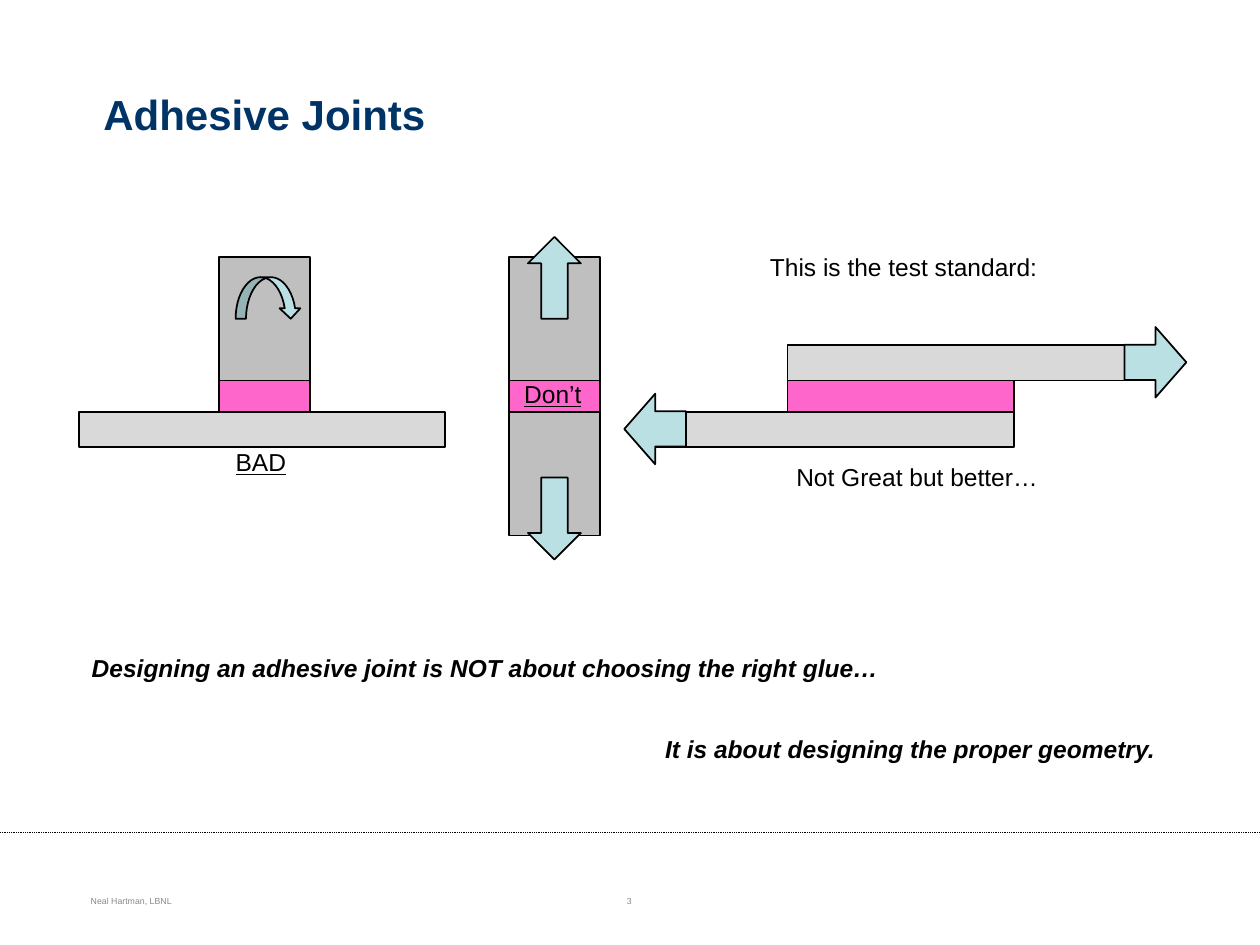
from pptx import Presentation
from pptx.dml.color import RGBColor
from pptx.enum.dml import MSO_LINE
from pptx.enum.shapes import MSO_CONNECTOR, MSO_SHAPE
from pptx.enum.text import MSO_ANCHOR, PP_ALIGN
from pptx.oxml.ns import qn
from pptx.util import Inches, Pt

RECTANGLE = MSO_SHAPE.RECTANGLE
DOWN_ARROW = MSO_SHAPE.DOWN_ARROW
CURVED_ARROW = MSO_SHAPE.CURVED_DOWN_ARROW
STRAIGHT = MSO_CONNECTOR.STRAIGHT
DOTTED = MSO_LINE.ROUND_DOT
TOP, MIDDLE = MSO_ANCHOR.TOP, MSO_ANCHOR.MIDDLE
LEFT, CENTER = PP_ALIGN.LEFT, PP_ALIGN.CENTER

BLACK, NAVY, FOOTER_GRAY = "000000", "003366", "898989"
BLOCK_GRAY, PLATE_GRAY = "BFBFBF", "D9D9D9"
GLUE_PINK, ARROW_BLUE = "FF66CC", "BBE0E3"

# Shared sizes of the joint parts, in inches
BLOCK_WIDTH, BLOCK_HEIGHT = 0.72, 0.98
PLATE_WIDTH, PLATE_HEIGHT = 2.9, 0.28
GLUE_HEIGHT = 0.25


def color(value):
    return RGBColor.from_string(value)


def inches(box):
    return [Inches(length) for length in box]


def set_text(shape, text, size=14, ink=BLACK, anchor=TOP, align=LEFT,
             margins=(0.07, 0.04), **styles):
    frame = shape.text_frame
    frame.word_wrap = True
    frame.vertical_anchor = anchor
    frame.margin_left = frame.margin_right = Inches(margins[0])
    frame.margin_top = frame.margin_bottom = Inches(margins[1])
    para = frame.paragraphs[0]
    para.alignment = align
    span = para.add_run()
    span.text = text
    span.font.color.rgb = color(ink)
    for name, value in {"name": "Arial", "size": Pt(size), **styles}.items():
        setattr(span.font, name, value)


def add_text(page, box, text, **formats):
    set_text(page.shapes.add_textbox(*inches(box)), text, **formats)


def add_part(page, box, fill, kind=RECTANGLE, rotation=0):
    part = page.shapes.add_shape(kind, *inches(box))
    part.shadow.inherit = False
    part.rotation = rotation
    part.fill.solid()
    part.fill.fore_color.rgb = color(fill)
    part.line.color.rgb = color(BLACK)
    part.line.width = Pt(1)


def add_title(page, box):
    title = page.shapes.title
    title.left, title.top, title.width, title.height = inches(box)
    set_text(title, "Adhesive Joints", size=24, ink=NAVY, anchor=MIDDLE, bold=True)


def add_peel_joint(page, box):
    left, top, width, _ = box
    block_left = left + (width - BLOCK_WIDTH) / 2 + 0.02
    glue_top = top + BLOCK_HEIGHT
    plate_top = glue_top + GLUE_HEIGHT
    add_part(page, (block_left, top, BLOCK_WIDTH, BLOCK_HEIGHT), BLOCK_GRAY)
    add_part(page, (left, plate_top, width, PLATE_HEIGHT), PLATE_GRAY)
    add_part(page, (block_left, glue_top, BLOCK_WIDTH, GLUE_HEIGHT), GLUE_PINK)
    add_part(page, (left + 1.24, top + 0.16, 0.52, 0.33), ARROW_BLUE, CURVED_ARROW)
    add_text(page, (left + 1.17, top + 1.47, 0.68, 0.38), "BAD", underline=True)


def add_butt_joint(page, box):
    left, top, width, height = box
    glue_top = top + BLOCK_HEIGHT
    for block_top in (top, glue_top + GLUE_HEIGHT):
        add_part(page, (left, block_top, width, BLOCK_HEIGHT), BLOCK_GRAY)
    add_part(page, (left, glue_top, width, GLUE_HEIGHT), GLUE_PINK)
    # Pulling forces at both ends
    for arrow_top, rotation in ((top - 0.16, 180), (top + height - 0.46, 0)):
        add_part(page, (left + 0.15, arrow_top, 0.42, 0.65),
                 ARROW_BLUE, DOWN_ARROW, rotation)
    add_text(page, (left + 0.05, glue_top - 0.05, 0.76, 0.38), "Don’t", underline=True)


def add_lap_joint(page, box):
    left, top, width, height = box
    upper_left = left + width - PLATE_WIDTH
    lower_top = top + height - PLATE_HEIGHT
    overlap = 2 * PLATE_WIDTH - width
    add_part(page, (left, lower_top, PLATE_WIDTH, PLATE_HEIGHT), PLATE_GRAY)
    add_part(page, (upper_left, top + PLATE_HEIGHT, overlap, GLUE_HEIGHT), GLUE_PINK)
    add_part(page, (upper_left, top, PLATE_WIDTH, PLATE_HEIGHT), PLATE_GRAY)
    # Shear forces on the two plates
    for arrow_left, plate_top, rotation in ((left - 0.23, lower_top, 90),
                                            (left + width - 0.26, top, 270)):
        add_part(page, (arrow_left, plate_top - 0.11, 0.56, 0.49),
                 ARROW_BLUE, DOWN_ARROW, rotation)
    add_text(page, (left + 0.89, top - 0.78, 2.82, 0.38), "This is the test standard:")
    add_text(page, (upper_left, top + 0.89, 2.56, 0.38), "Not Great but better…")


def add_message(page, box):
    left, top, width, height = box
    formats = {"margins": (0.1, 0.05), "bold": True, "italic": True}
    add_text(page, (left, top, 6.54, 0.34),
             "Designing an adhesive joint is NOT about choosing the right glue…",
             **formats)
    add_text(page, (left + width - 4.17, top + height - 0.34, 4.17, 0.34),
             "It is about designing the proper geometry.", **formats)


def add_footer(page, box):
    left, top, width, _ = box
    rule = page.shapes.add_connector(
        STRAIGHT, *inches((left, top, left + width, top)))
    rule.line.color.rgb = color(BLACK)
    rule.line.width = Pt(0.5)
    rule.line.dash_style = DOTTED
    properties = rule.element.spPr
    properties.append(properties.makeelement(qn("a:effectLst"), {}))
    formats = {"size": 5, "ink": FOOTER_GRAY, "anchor": MIDDLE}
    add_text(page, (left + 0.65, top + 0.34, 3.17, 0.4), "Neal Hartman, LBNL", **formats)
    add_text(page, (left + 3.83, top + 0.34, 2.33, 0.4), "3", align=CENTER, **formats)


def main():
    deck = Presentation()
    deck.slide_width, deck.slide_height = Inches(10), Inches(7.5)
    page = deck.slides.add_slide(deck.slide_layouts[5])
    add_title(page, (0.75, 0.28, 8.51, 1.25))
    add_peel_joint(page, (0.63, 2.04, PLATE_WIDTH, 1.51))
    add_butt_joint(page, (4.04, 2.04, BLOCK_WIDTH, 2.21))
    add_lap_joint(page, (5.15, 2.74, 4, 0.81))
    add_message(page, (0.63, 5.13, 8.72, 0.99))
    add_footer(page, (0, 6.61, 10, 0.89))
    deck.save("out.pptx")


if __name__ == "__main__":
    main()
